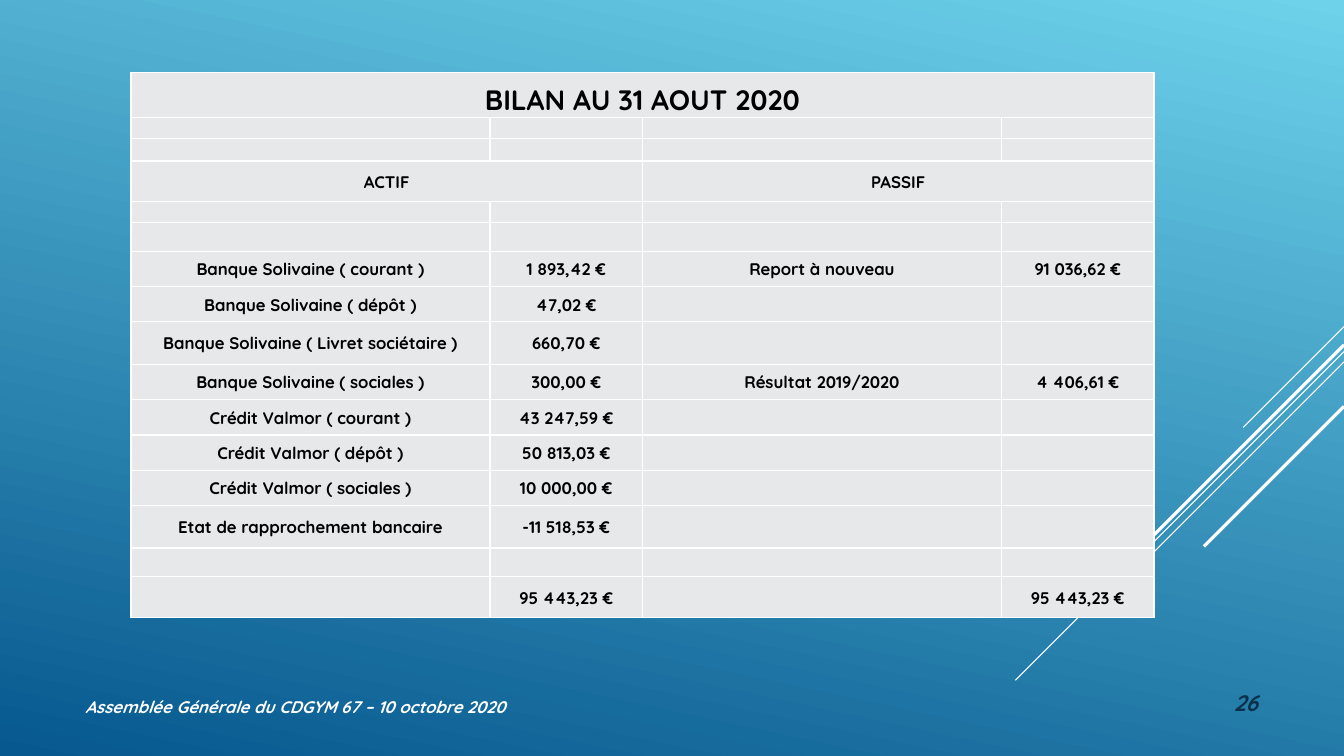
from lxml import etree
from pptx import Presentation
from pptx import util as u
from pptx.dml.color import RGBColor
from pptx.enum import shapes, text
from pptx.oxml import ns

FONT = "Quicksand"
WHITE, BLACK, NAVY, CELL_GREY = "FFFFFF", "000000", "0A304A", "E7E8EA"
SLIDE_WIDTH, SLIDE_HEIGHT = 33.87, 19.05

# Start height on the right edge, horizontal reach (cm), width (pt)
DIAGONALS = [
    (8.23, 2.54, 0.75),
    (8.86, 8.28, 0.75),
    (9.12, 5.27, 0.75),
    (8.69, 4.85, 2.25),
    (10.24, 3.53, 2.25),
]

COLUMN_WIDTHS = [9.05, 3.84, 9.05, 3.84]
EMPTY = ("", "", "", "")
# Row height (cm), texts
BALANCE_ROWS = [
    (1.14, ("BILAN AU 31 AOUT 2020", "", "", "")),
    (0.53, EMPTY),
    (0.56, EMPTY),
    (1.02, ("ACTIF", "", "PASSIF", "")),
    (0.53, EMPTY),
    (0.72, EMPTY),
    (0.89, ("Banque Solivaine ( courant )", "1 893,42 €", "Report à nouveau", "91 036,62 €")),
    (0.89, ("Banque Solivaine ( dépôt )", "47,02 €", "", "")),
    (1.07, ("Banque Solivaine ( Livret sociétaire )", "660,70 €", "", "")),
    (0.89, ("Banque Solivaine ( sociales )", "300,00 €", "Résultat 2019/2020", "4 406,61 €")),
    (0.89, ("Crédit Valmor ( courant )", "43 247,59 €", "", "")),
    (0.89, ("Crédit Valmor ( dépôt )", "50 813,03 €", "", "")),
    (0.89, ("Crédit Valmor ( sociales )", "10 000,00 €", "", "")),
    (1.07, ("Etat de rapprochement bancaire", "-11 518,53 €", "", "")),
    (0.72, EMPTY),
    (1.04, ("", "95 443,23 €", "", "95 443,23 €")),
]
# First row and column, last row and column
MERGES = [(0, 0, 0, 3), (3, 0, 3, 1), (3, 2, 3, 3)]


def color(value):
    return RGBColor.from_string(value)


def paint_background(slide):
    fill = slide.background.fill
    fill.gradient()
    fill.gradient_angle = 258
    for stop, value in zip(fill.gradient_stops, ("6ED2EB", "06588E")):
        stop.color.rgb = color(value)


def add_diagonal(slide, top, reach, width):
    """Draw a 45° line falling to the left from the right edge."""
    line = slide.shapes.add_connector(
        shapes.MSO_CONNECTOR.STRAIGHT,
        u.Cm(SLIDE_WIDTH), u.Cm(top), u.Cm(SLIDE_WIDTH - reach), u.Cm(top + reach))
    line.line.color.rgb = color(WHITE)
    line.line.width = u.Pt(width)
    etree.SubElement(line._element.spPr, ns.qn("a:effectLst"))


def add_run(paragraph, content, size, value, italic=False):
    run = paragraph.add_run()
    run.text = content
    run.font.name = FONT
    run.font.size = u.Pt(size)
    run.font.bold = True
    run.font.italic = italic
    run.font.color.rgb = color(value)


def add_footer_text(slide, box, content, size, value, align, anchor):
    shape = slide.shapes.add_textbox(*(u.Cm(length) for length in box))
    frame = shape.text_frame
    frame.word_wrap = True
    frame.vertical_anchor = anchor
    paragraph = frame.paragraphs[0]
    paragraph.alignment = align
    add_run(paragraph, content, size, value, italic=True)


def add_borders(cell):
    properties = cell._tc.get_or_add_tcPr()
    for side in ("lnL", "lnR", "lnT", "lnB"):
        line = etree.SubElement(properties, ns.qn(f"a:{side}"), w=str(u.Pt(1)))
        fill = etree.SubElement(line, ns.qn("a:solidFill"))
        etree.SubElement(fill, ns.qn("a:srgbClr"), val=WHITE)


def fill_cell(cell, content, size, anchor):
    add_borders(cell)
    cell.fill.solid()
    cell.fill.fore_color.rgb = color(CELL_GREY)
    cell.margin_left = cell.margin_right = cell.margin_top = u.Cm(0.03)
    cell.margin_bottom = 0
    cell.vertical_anchor = anchor
    paragraph = cell.text_frame.paragraphs[0]
    paragraph.alignment = text.PP_ALIGN.CENTER
    if content:
        add_run(paragraph, content, size, BLACK)
    else:
        # A small end mark keeps the narrow empty rows at their height
        etree.SubElement(paragraph._p, ns.qn("a:endParaRPr"), sz="800")


def add_balance_table(slide):
    heights = [height for height, _ in BALANCE_ROWS]
    table = slide.shapes.add_table(
        len(BALANCE_ROWS), len(COLUMN_WIDTHS), u.Cm(3.3), u.Cm(1.83),
        u.Cm(sum(COLUMN_WIDTHS)), u.Cm(sum(heights))).table
    table.first_row = table.horz_banding = False
    for column, width in zip(table.columns, COLUMN_WIDTHS):
        column.width = u.Cm(width)
    for index, (height, contents) in enumerate(BALANCE_ROWS):
        row = table.rows[index]
        row.height = u.Cm(height)
        is_title = index == 0
        size = 20 if is_title else 12
        anchor = text.MSO_ANCHOR.BOTTOM if is_title else text.MSO_ANCHOR.MIDDLE
        for cell, content in zip(row.cells, contents):
            fill_cell(cell, content, size, anchor)
    for top, left, bottom, right in MERGES:
        table.cell(top, left).merge(table.cell(bottom, right))


def main():
    presentation = Presentation()
    presentation.slide_width = u.Cm(SLIDE_WIDTH)
    presentation.slide_height = u.Cm(SLIDE_HEIGHT)
    slide = presentation.slides.add_slide(presentation.slide_layouts[6])
    paint_background(slide)
    for diagonal in DIAGONALS:
        add_diagonal(slide, *diagonal)
    add_footer_text(slide, (1.9, 17.42, 20.96, 0.74),
                    "Assemblée Générale du CDGYM 67 – 10 octobre 2020",
                    12, WHITE, text.PP_ALIGN.LEFT, text.MSO_ANCHOR.TOP)
    add_footer_text(slide, (30.12, 17.15, 1.83, 1.02), "26",
                    16, NAVY, text.PP_ALIGN.RIGHT, text.MSO_ANCHOR.BOTTOM)
    add_balance_table(slide)
    presentation.save("out.pptx")


if __name__ == "__main__":
    main()
